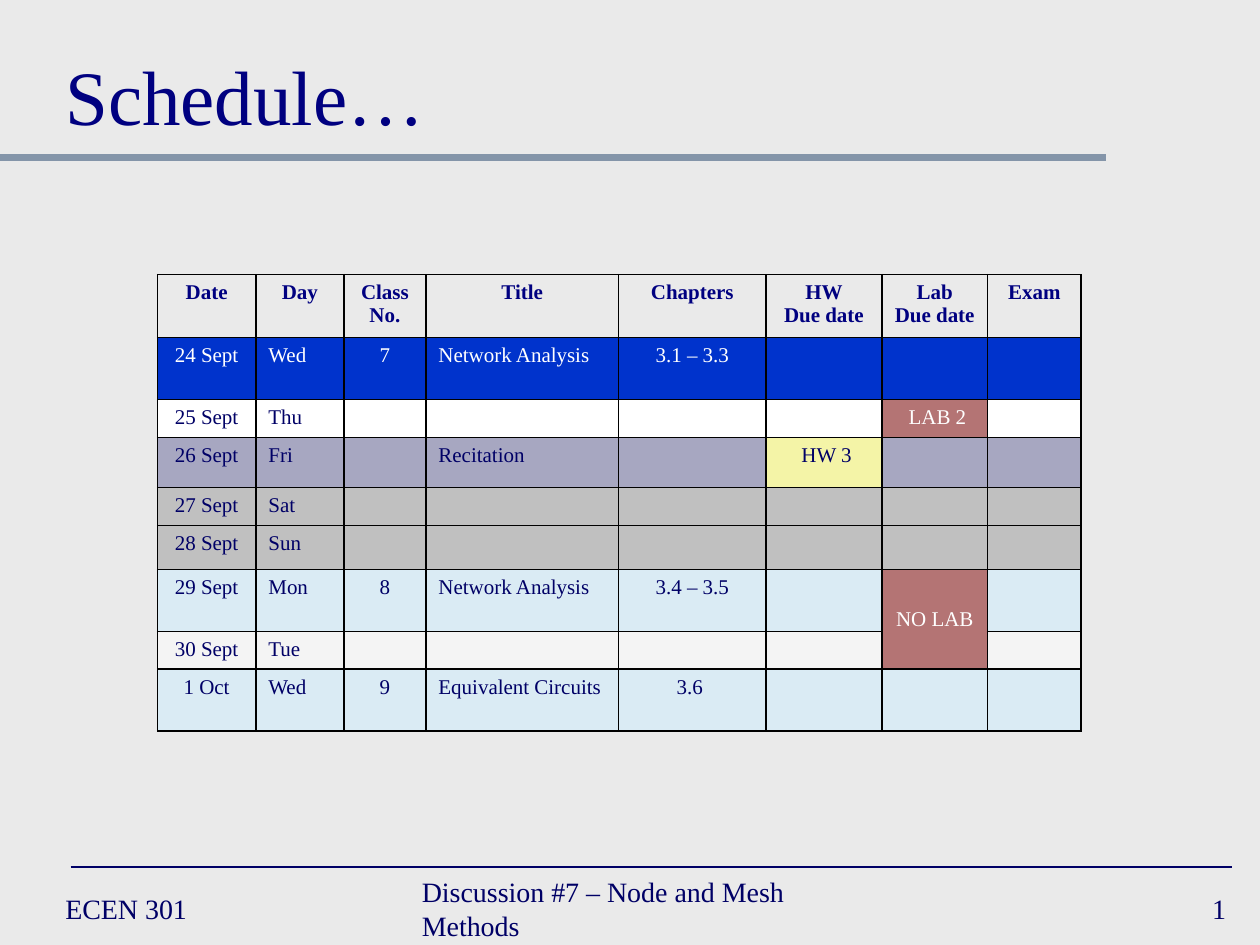
from lxml import etree
from pptx import Presentation
from pptx.dml.color import RGBColor
from pptx.enum.shapes import MSO_CONNECTOR
from pptx.enum.text import MSO_ANCHOR, PP_ALIGN
from pptx.oxml.ns import qn
from pptx.util import Inches, Pt

STRAIGHT = MSO_CONNECTOR.STRAIGHT
LEFT, CENTER, RIGHT = PP_ALIGN.LEFT, PP_ALIGN.CENTER, PP_ALIGN.RIGHT
TOP, MIDDLE, BOTTOM = MSO_ANCHOR.TOP, MSO_ANCHOR.MIDDLE, MSO_ANCHOR.BOTTOM

WIDTH, HEIGHT = 10, 7.5
FONT = "Times New Roman"
NAVY, INK, WHITE = "000080", "000066", "FFFFFF"
COLUMNS = [0.78, 0.7, 0.65, 1.53, 1.17, 0.92, 0.84, 0.74]
ALIGNS = [CENTER, LEFT, CENTER, LEFT, CENTER, CENTER, CENTER, CENTER]
HEADINGS = ["Date", "Day", "Class\nNo.", "Title", "Chapters",
            "HW\nDue date", "Lab\nDue date", "Exam"]
HEADING_HEIGHT = 0.49
CLASS_DAY = ("CCECFF", 50)
WEEKEND = ("C0C0C0", 100)
LAB = ("800000", 50)
HOMEWORK = ("FFFF66", 50)
DAYS = [
    (0.49, ("0033CC", 100), WHITE, ["24 Sept", "Wed", "7", "Network Analysis", "3.1 – 3.3"]),
    (0.3, (WHITE, 100), INK, ["25 Sept", "Thu", "", "", "", "", "\u00a0LAB 2"]),
    (0.4, ("666699", 50), INK, ["26 Sept", "Fri", "", "Recitation", "", "\u00a0HW 3"]),
    (0.3, WEEKEND, INK, ["27 Sept", "Sat"]),
    (0.35, WEEKEND, INK, ["28 Sept", "Sun"]),
    (0.49, CLASS_DAY, INK, ["29 Sept", "Mon", "8", "Network Analysis", "3.4 – 3.5", "", "NO LAB"]),
    (0.26, (WHITE, 50), INK, ["30 Sept", "Tue"]),
    (0.49, CLASS_DAY, INK, ["1 Oct", "Wed", "9", "Equivalent Circuits", "3.6 "]),
]
SPECIAL_CELLS = {(2, 6): (LAB, WHITE), (3, 5): (HOMEWORK, INK), (6, 6): (LAB, WHITE)}
NO_LAB_START, NO_LAB_END = (6, 6), (7, 6)


def color(value):
    """Turn a hex string into a colour."""
    return RGBColor.from_string(value)


def write(frame, text, size=12, ink=INK, bold=False, align=LEFT):
    """Fill a text frame, one paragraph for each line of the text."""
    for index, line in enumerate(text.split("\n")):
        para = frame.add_paragraph() if index else frame.paragraphs[0]
        para.alignment = align
        if line:
            span = para.add_run()
            span.text = line
            span.font.name, span.font.size, span.font.bold = FONT, Pt(size), bold
            span.font.color.rgb = color(ink)
        else:
            etree.SubElement(para._p, qn("a:endParaRPr"), sz=str(size * 100))


def add_text(page, box, text, anchor=MIDDLE, wrap=False, **style):
    """Place a text box."""
    frame = page.shapes.add_textbox(*map(Inches, box)).text_frame
    frame.word_wrap = wrap
    frame.vertical_anchor = anchor
    write(frame, text, **style)


def add_rule(page, left, right, top, ink, weight):
    """Draw a horizontal rule without a shadow."""
    rule = page.shapes.add_connector(
        STRAIGHT, Inches(left), Inches(top), Inches(right), Inches(top))
    rule.line.color.rgb = color(ink)
    rule.line.width = Pt(weight)
    etree.SubElement(rule._element.spPr, qn("a:effectLst"))


def add_borders(cell):
    """Give a cell a thin black line on every side."""
    properties = cell._tc.get_or_add_tcPr()
    for side in ("a:lnL", "a:lnR", "a:lnT", "a:lnB"):
        line = etree.SubElement(properties, qn(side), w=str(Pt(1)))
        fill = etree.SubElement(line, qn("a:solidFill"))
        etree.SubElement(fill, qn("a:srgbClr"), val="000000")


def paint(cell, shade):
    """Fill a cell with a colour and opacity, or leave it clear."""
    if shade is None:
        cell.fill.background()
        return
    value, opacity = shade
    cell.fill.solid()
    cell.fill.fore_color.rgb = color(value)
    if opacity < 100:
        tint = cell._tc.tcPr.find(qn("a:solidFill")).find(qn("a:srgbClr"))
        etree.SubElement(tint, qn("a:alpha"), val=str(opacity * 1000))


def add_header(page, left, top, width, height):
    """Place the title and the rule beneath it."""
    add_text(page, (left, top, width, height), "Schedule…", anchor=BOTTOM,
             wrap=True, size=44, ink=NAVY)
    add_rule(page, 0, 8.78, 1.25, "8495A9", 4)


def add_schedule(page, left, top):
    """Build the class schedule table."""
    heights = [HEADING_HEIGHT] + [day[0] for day in DAYS]
    table = page.shapes.add_table(
        len(heights), len(COLUMNS), Inches(left), Inches(top),
        Inches(sum(COLUMNS)), Inches(sum(heights))).table
    table.first_row = table.horz_banding = False
    for column, width in zip(table.columns, COLUMNS):
        column.width = Inches(width)
    rows = [(None, NAVY, HEADINGS)] + [day[1:] for day in DAYS]
    for row, (shade, ink, texts) in enumerate(rows):
        table.rows[row].height = Inches(heights[row])
        padded = texts + [""] * (len(COLUMNS) - len(texts))
        for column, text in enumerate(padded):
            cell = table.cell(row, column)
            cell_shade, cell_ink = SPECIAL_CELLS.get((row, column), (shade, ink))
            add_borders(cell)
            paint(cell, cell_shade)
            cell.vertical_anchor = TOP
            write(cell.text_frame, text, ink=cell_ink, bold=row == 0,
                  align=ALIGNS[column] if row else CENTER)
    no_lab = table.cell(*NO_LAB_START)
    no_lab.merge(table.cell(*NO_LAB_END))
    no_lab.vertical_anchor = MIDDLE


def add_footer(page, top, height):
    """Place the footer rule, course, topic and page number."""
    add_rule(page, 0.56, 9.78, top - 0.12, INK, 1)
    for left, width, text, align in (
            (0.42, 2.17, "ECEN 301", LEFT),
            (3.25, 3.83, "Discussion #7 – Node and Mesh Methods", LEFT),
            (7.75, 2.08, "1", RIGHT)):
        add_text(page, (left, top, width, height), text, size=16, align=align)


def main():
    """Build and save the deck."""
    deck = Presentation()
    deck.slide_width, deck.slide_height = Inches(WIDTH), Inches(HEIGHT)
    page = deck.slides.add_slide(deck.slide_layouts[6])
    page.background.fill.solid()
    page.background.fill.fore_color.rgb = color("EAEAEA")
    add_header(page, 0.42, 0.17, 9.25, 1)
    add_schedule(page, 1.25, 2.18)
    add_footer(page, 7, 0.42)
    deck.save("out.pptx")


if __name__ == "__main__":
    main()
